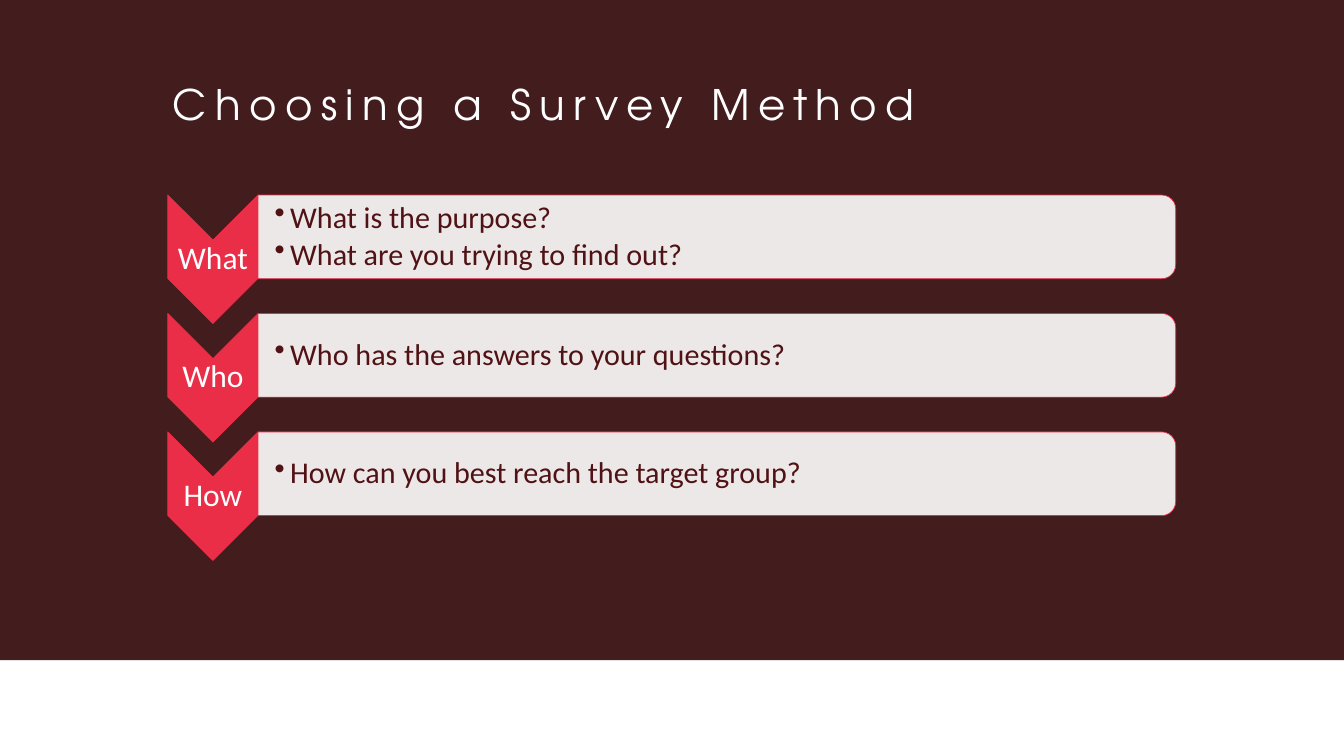
"""Build the survey method slide: a title above three chevron-led question rows."""
from dataclasses import dataclass
from typing import Optional

from lxml import etree
from pptx import Presentation
from pptx import util as u
from pptx.dml.color import RGBColor
from pptx.enum import shapes, text
from pptx.oxml import ns

MAROON = RGBColor(0x43, 0x1C, 0x1D)
CRIMSON = RGBColor(0xEB, 0x2E, 0x47)
WINE = RGBColor(0x50, 0x12, 0x14)
WHITE = RGBColor(0xFF, 0xFF, 0xFF)

SLIDE_WIDTH, SLIDE_HEIGHT = 26.67, 15
FIRST_ROW_TOP, ROW_PITCH = 3.87, 2.35
CHEVRON_LEFT, CHEVRON_WIDTH, CHEVRON_HEIGHT = 3.33, 1.79, 2.55
PANEL_LEFT, PANEL_WIDTH, PANEL_HEIGHT = 5.12, 18.21, 1.66
LABEL_HEIGHT, LIST_WIDTH, LIST_HEIGHT = 0.77, 18.13, 1.5
INSET, LIST_INSET, BULLET_INDENT = 0.03, 0.33, 0.31


@dataclass(frozen=True)
class Step:
    label: str
    questions: tuple[str, ...]


STEPS = (
    Step("What", ("What is the purpose?", "What are you trying to find out?")),
    Step("Who", ("Who has the answers to your questions?",)),
    Step("How", ("How can you best reach the target group?",)),
)


def write_text(frame, lines: tuple[str, ...], *, size: float, color: RGBColor,
               font: str = "Calibri", align=text.PP_ALIGN.LEFT, space_after: float = 0,
               bullet: Optional[str] = None, tracking: float = 0) -> None:
    """Fill a text frame with one formatted paragraph per line."""
    frame.word_wrap = True
    frame.auto_size = text.MSO_AUTO_SIZE.NONE
    frame.vertical_anchor = text.MSO_ANCHOR.MIDDLE
    for index, line in enumerate(lines):
        paragraph = frame.add_paragraph() if index else frame.paragraphs[0]
        paragraph.alignment = align
        paragraph.line_spacing = 0.9
        paragraph.space_after = u.Pt(space_after)
        if bullet:
            paragraph.level = 1
            properties = paragraph._p.get_or_add_pPr()
            properties.set("marL", str(u.Inches(BULLET_INDENT)))
            properties.set("indent", str(-u.Inches(BULLET_INDENT)))
            etree.SubElement(properties, ns.qn("a:buChar")).set("char", bullet)
        run = paragraph.add_run()
        run.text = line
        run.font.size = u.Pt(size)
        run.font.name = font
        run.font.color.rgb = color
        if tracking:
            run._r.get_or_add_rPr().set("spc", str(round(tracking * 100)))


def add_turned_shape(slide, kind, left: float, top: float, width: float, height: float,
                     fill: RGBColor, opacity: int = 100):
    """Add a shape turned a quarter clockwise that covers the given area."""
    shape = slide.shapes.add_shape(
        kind, u.Inches(left + (width - height) / 2), u.Inches(top + (height - width) / 2),
        u.Inches(height), u.Inches(width))
    shape.rotation = 90
    shape.shadow.inherit = False
    shape.fill.solid()
    shape.fill.fore_color.rgb = fill
    if opacity < 100:
        color = shape._element.spPr.find(ns.qn("a:solidFill"))[0]
        etree.SubElement(color, ns.qn("a:alpha")).set("val", str(opacity * 1000))
    shape.line.color.rgb = CRIMSON
    shape.line.width = u.Pt(1)
    return shape


def add_text_area(slide, left: float, top: float, width: float, height: float,
                  left_inset: float = INSET):
    """Add a text box with narrow margins and return its text frame."""
    frame = slide.shapes.add_textbox(*map(u.Inches, (left, top, width, height))).text_frame
    frame.margin_left = u.Inches(left_inset)
    frame.margin_top = frame.margin_right = frame.margin_bottom = u.Inches(INSET)
    return frame


def add_step(slide, step: Step, top: float) -> None:
    """Draw one chevron with its label and the panel of questions beside it."""
    add_turned_shape(slide, shapes.MSO_SHAPE.CHEVRON, CHEVRON_LEFT, top,
                     CHEVRON_WIDTH, CHEVRON_HEIGHT, CRIMSON)
    label = add_text_area(slide, CHEVRON_LEFT, top + (CHEVRON_HEIGHT - LABEL_HEIGHT) / 2,
                          CHEVRON_WIDTH, LABEL_HEIGHT)
    write_text(label, (step.label,), size=45, color=WHITE, align=text.PP_ALIGN.CENTER)
    add_turned_shape(slide, shapes.MSO_SHAPE.ROUND_2_SAME_RECTANGLE, PANEL_LEFT, top,
                     PANEL_WIDTH, PANEL_HEIGHT, WHITE, opacity=90)
    questions = add_text_area(slide, PANEL_LEFT, top + (PANEL_HEIGHT - LIST_HEIGHT) / 2,
                              LIST_WIDTH, LIST_HEIGHT, LIST_INSET)
    write_text(questions, step.questions, size=43, color=WINE, space_after=6.5, bullet="•")


def main() -> None:
    """Assemble and save the presentation."""
    deck = Presentation()
    deck.slide_width, deck.slide_height = u.Inches(SLIDE_WIDTH), u.Inches(SLIDE_HEIGHT)
    slide = deck.slides.add_slide(deck.slide_layouts[5])

    title = slide.shapes.title
    title.left, title.top, title.width, title.height = map(u.Inches, (3.33, 1.5, 20, 1.25))
    write_text(title.text_frame, ("Choosing a Survey Method",), size=60, color=WHITE,
               font="TeX Gyre Adventor", tracking=12)

    backdrop = slide.shapes.add_shape(shapes.MSO_SHAPE.RECTANGLE, 0, 0,
                                      deck.slide_width, u.Inches(13.1))
    backdrop.shadow.inherit = False
    backdrop.fill.solid()
    backdrop.fill.fore_color.rgb = MAROON
    backdrop.line.fill.background()
    title._element.addprevious(backdrop._element)

    for index, step in enumerate(STEPS):
        add_step(slide, step, FIRST_ROW_TOP + index * ROW_PITCH)
    deck.save("out.pptx")


if __name__ == "__main__":
    main()
